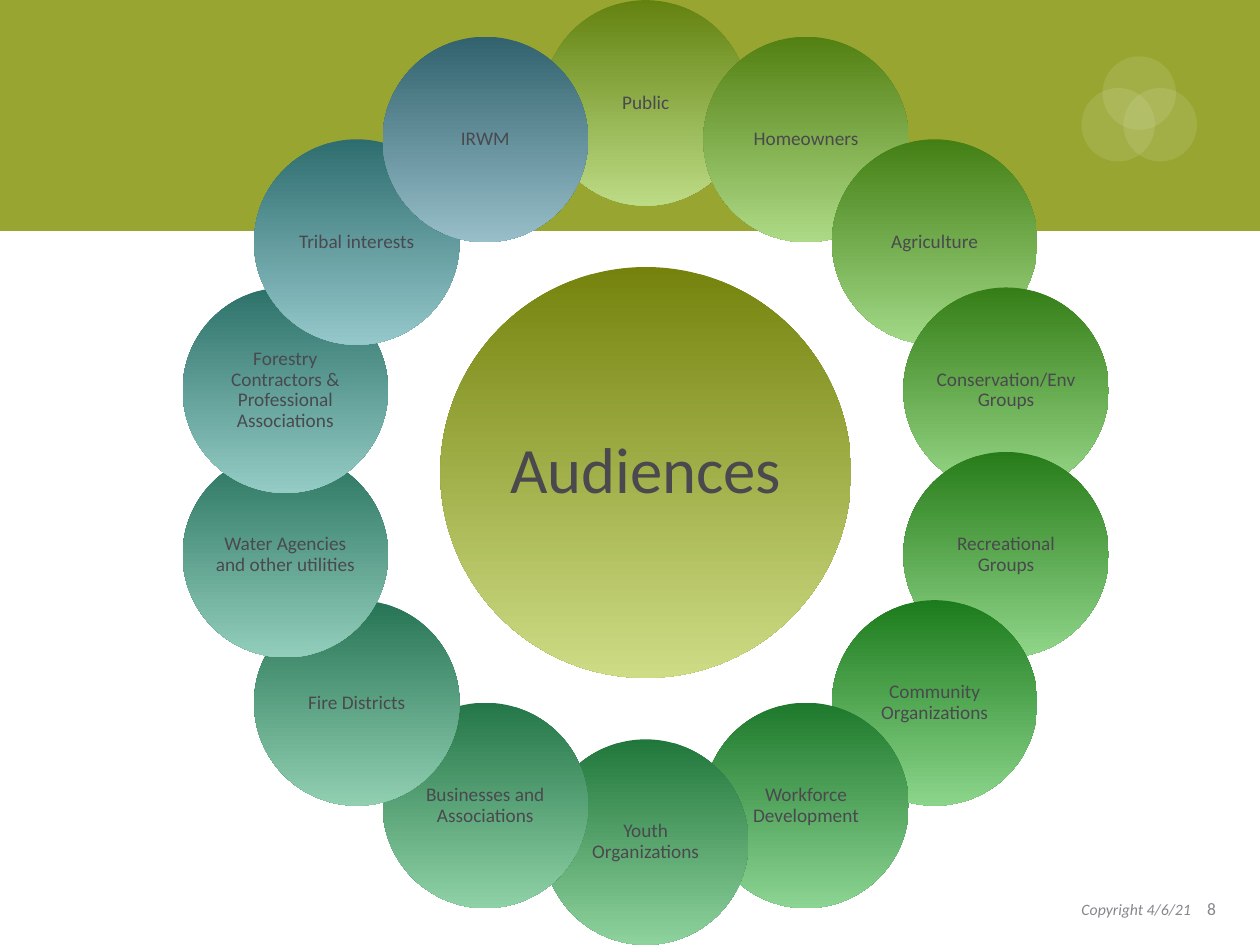
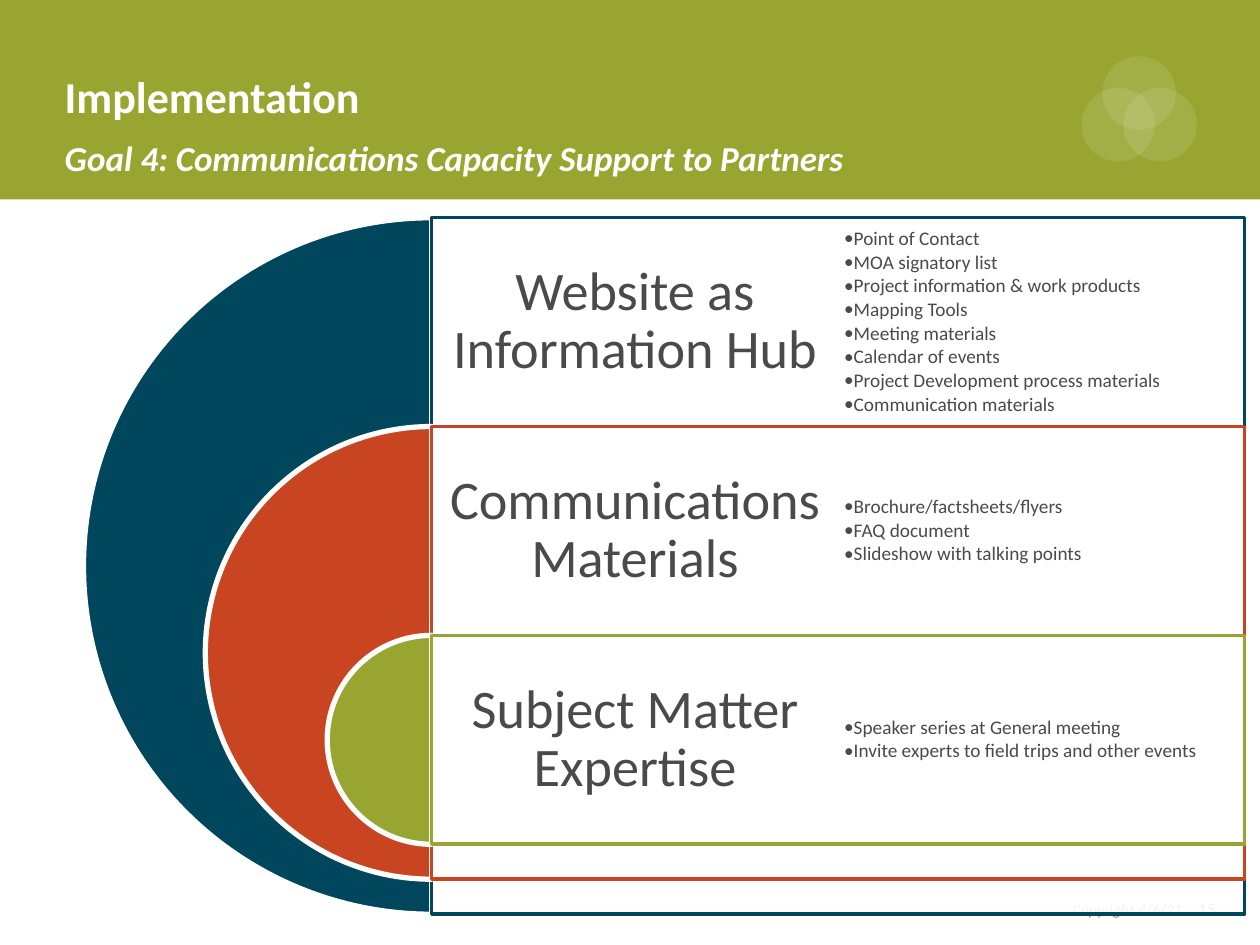
"""Build two slides: a ring of audiences and a nested implementation chart."""
from dataclasses import dataclass
from math import cos, pi, sin

from lxml import etree
from pptx import Presentation
from pptx.dml.color import RGBColor
from pptx.enum.shapes import MSO_SHAPE
from pptx.enum.text import MSO_ANCHOR, PP_ALIGN
from pptx.oxml.ns import qn
from pptx.util import Pt

OVAL, RECTANGLE, PIE = MSO_SHAPE.OVAL, MSO_SHAPE.RECTANGLE, MSO_SHAPE.PIE
LEFT, CENTER = PP_ALIGN.LEFT, PP_ALIGN.CENTER
MIDDLE = MSO_ANCHOR.MIDDLE

FONT = "Calibri"
COLORS = {
    "white": "FFFFFF",
    "olive": "98A631",
    "navy": "00465C",
    "rust": "C94420",
    "text": "49494E",
    "footer": "86868E",
}
SLIDE_WIDTH, SLIDE_HEIGHT = 720, 540
BAND_HEIGHT = 132
FOOTER_RIGHT, FOOTER_TOP, FOOTER_HEIGHT = 694.8, 508.5, 21

RING_X, RING_Y, RING_RADIUS = 369, 270, 211.2
CIRCLE_SIZE, HUB_SIZE = 117.4, 234.8

CHART_LEFT, CHART_TOP, CHART_WIDTH = 246.7, 124.4, 464.4
ROW_HEIGHT, OUTER_SIZE, SIZE_STEP = 119.35, 398, 139.3


@dataclass(frozen=True)
class Frame:
    left: float
    top: float
    width: float
    height: float


@dataclass(frozen=True)
class TextStyle:
    size: float
    color: str = "text"
    align: PP_ALIGN = CENTER
    bold: bool = False
    italic: bool = False
    spacing: float = 1.0
    inset: float = 0
    bullet: bool = False


@dataclass(frozen=True)
class Audience:
    label: str
    dark: str
    light: str


@dataclass(frozen=True)
class Topic:
    heading: str
    color: str
    items: tuple[str, ...]


TITLE = TextStyle(25.2, "white", LEFT, bold=True)
SUBTITLE = TextStyle(20, "white", LEFT, bold=True, italic=True)
FOOTER = TextStyle(9, "footer", LEFT, italic=True)
HUB_LABEL = TextStyle(37, spacing=0.9, inset=3.5)
CIRCLE_LABEL = TextStyle(11, spacing=0.9, inset=1)
HEADING = TextStyle(31, spacing=0.9, inset=8)
ITEM = TextStyle(11, align=LEFT, spacing=0.9, inset=3.5, bullet=True)

HUB = Audience("Audiences", "75830D", "CDDC85")
AUDIENCES = (
    Audience("Public", "638210", "BCDB85"),
    Audience("Homeowners", "538012", "ADDA86"),
    Audience("Agriculture", "437F14", "A2D988"),
    Audience("Conservation/Env Groups", "357E17", "98D889"),
    Audience("Recreational Groups", "277C19", "90D68A"),
    Audience("Community Organizations", "1C7B1C", "8BD58B"),
    Audience("Workforce Development", "1E792C", "8CD493"),
    Audience("Youth Organizations", "21773B", "8ED29D"),
    Audience("Businesses and Associations", "247648", "8FD1A7"),
    Audience("Fire Districts", "267455", "91CFB1"),
    Audience("Water Agencies and other utilities", "29735F", "92CEBB"),
    Audience("Forestry Contractors & Professional Associations", "2C7169", "94CCC5"),
    Audience("Tribal interests", "2E6D6F", "95C8CB"),
    Audience("IRWM", "31626D", "97BEC9"),
)
TOPICS = (
    Topic("Website as Information Hub", "navy", (
        "Point of Contact",
        "MOA signatory list",
        "Project information & work products",
        "Mapping Tools",
        "Meeting materials",
        "Calendar of events",
        "Project Development process materials",
        "Communication materials",
    )),
    Topic("Communications Materials", "rust", (
        "Brochure/factsheets/flyers",
        "FAQ document",
        "Slideshow with talking points",
    )),
    Topic("Subject Matter Expertise", "olive", (
        "Speaker series at General meeting",
        "Invite experts to field trips and other events",
    )),
)


def rgb(name: str) -> RGBColor:
    """Return a palette colour."""
    return RGBColor.from_string(COLORS[name])


def points(frame: Frame) -> tuple:
    """Convert a frame to lengths."""
    return Pt(frame.left), Pt(frame.top), Pt(frame.width), Pt(frame.height)


def add_bullet(para) -> None:
    """Give a paragraph a hanging bullet in the text font."""
    properties = para._p.get_or_add_pPr()
    properties.set("marL", str(Pt(4.5)))
    properties.set("indent", str(-Pt(4.5)))
    etree.SubElement(properties, qn("a:buFont")).set("typeface", FONT)
    etree.SubElement(properties, qn("a:buChar")).set("char", "•")


def write_text(shape, lines: tuple[str, ...], style: TextStyle) -> None:
    """Fill a shape with middle-anchored paragraphs of one style."""
    frame = shape.text_frame
    frame.word_wrap = True
    frame.vertical_anchor = MIDDLE
    frame.margin_left = frame.margin_right = Pt(style.inset)
    frame.margin_top = frame.margin_bottom = Pt(style.inset)
    for index, line in enumerate(lines):
        para = frame.add_paragraph() if index else frame.paragraphs[0]
        para.text = line
        para.alignment = style.align
        para.line_spacing = style.spacing
        if style.bullet:
            para.space_after = Pt(1.65)
            add_bullet(para)
        para.font.name = FONT
        para.font.size = Pt(style.size)
        para.font.bold = style.bold
        para.font.italic = style.italic
        para.font.color.rgb = rgb(style.color)


def add_text(page, frame: Frame, lines: tuple[str, ...], style: TextStyle) -> None:
    """Add a text box."""
    write_text(page.shapes.add_textbox(*points(frame)), lines, style)


def add_footer(page, number: int) -> None:
    """Add the copyright line with the page number at a right tab."""
    left = 623 - 5 * len(str(number))
    width = FOOTER_RIGHT - left
    box = page.shapes.add_textbox(*points(Frame(left, FOOTER_TOP, width + 5, FOOTER_HEIGHT)))
    para = box.text_frame.paragraphs[0]
    tabs = etree.SubElement(para._p.get_or_add_pPr(), qn("a:tabLst"))
    etree.SubElement(tabs, qn("a:tab"), pos=str(Pt(width)), algn="r")
    write_text(box, ("Copyright 4/6/21",), FOOTER)
    span = para.add_run()
    span.text = f"\t{number}"
    span.font.size = Pt(10)
    span.font.italic = False


def add_shape(page, kind: MSO_SHAPE, frame: Frame, fill: str, opacity: int = 100,
              line: str = "", line_width: float = 0):
    """Add a flat shape, outlined when a line colour is given."""
    shape = page.shapes.add_shape(kind, *points(frame))
    shape.shadow.inherit = False
    shape.fill.solid()
    shape.fill.fore_color.rgb = rgb(fill)
    if opacity < 100:
        color = shape._element.spPr.find(qn("a:solidFill"))[0]
        etree.SubElement(color, qn("a:alpha")).set("val", str(opacity * 1000))
    if line:
        shape.line.color.rgb = rgb(line)
        shape.line.width = Pt(line_width)
    else:
        shape.line.fill.background()
    return shape


def add_page(deck, number: int):
    """Add a slide with the band, footer and emblem circles."""
    page = deck.slides.add_slide(deck.slide_layouts[6])
    add_shape(page, RECTANGLE, Frame(0, 0, SLIDE_WIDTH, BAND_HEIGHT), "olive")
    add_footer(page, number)
    for left, top in ((618, 50.3), (642, 50.3), (630, 32.2)):
        add_shape(page, OVAL, Frame(left, top, 42, 42), "white", opacity=10)
    return page


def add_circle(page, audience: Audience, center_x: float, center_y: float,
               size: float, style: TextStyle) -> None:
    """Add a labelled circle shaded from dark to light."""
    frame = Frame(center_x - size / 2, center_y - size / 2, size, size)
    circle = add_shape(page, OVAL, frame, "olive")
    circle.fill.gradient()
    circle.fill.gradient_angle = 270
    for stop, color in zip(circle.fill.gradient_stops, (audience.dark, audience.light)):
        stop.color.rgb = RGBColor.from_string(color)
    write_text(circle, (audience.label,), style)


def build_audiences(deck) -> None:
    """Draw the audiences around their hub."""
    page = add_page(deck, 8)
    add_circle(page, HUB, RING_X, RING_Y, HUB_SIZE, HUB_LABEL)
    for index, audience in enumerate(AUDIENCES):
        angle = 2 * pi * index / len(AUDIENCES)
        add_circle(page, audience, RING_X + RING_RADIUS * sin(angle),
                   RING_Y - RING_RADIUS * cos(angle), CIRCLE_SIZE, CIRCLE_LABEL)


def build_implementation(deck) -> None:
    """Draw the nested half circles with their topics."""
    page = add_page(deck, 15)
    add_text(page, Frame(37, 35, 538, 40), ("Implementation",), TITLE)
    add_text(page, Frame(37, 72.5, 538, 35),
             ("Goal 4: Communications Capacity Support to Partners",), SUBTITLE)
    add_shape(page, RECTANGLE, Frame(0, 114, SLIDE_WIDTH, 180), "white")
    column = CHART_WIDTH / 2
    for index, topic in enumerate(TOPICS):
        top = CHART_TOP + index * ROW_HEIGHT
        size = OUTER_SIZE - index * SIZE_STEP
        half = add_shape(page, PIE, Frame(CHART_LEFT - size / 2, top, size, size),
                         topic.color, line="white", line_width=3)
        half.adjustments[0], half.adjustments[1] = 54, 162
        add_shape(page, RECTANGLE, Frame(CHART_LEFT, top, CHART_WIDTH, size),
                  "white", opacity=90, line=topic.color, line_width=2)
        add_text(page, Frame(CHART_LEFT, top, column, ROW_HEIGHT), (topic.heading,), HEADING)
        add_text(page, Frame(CHART_LEFT + column, top, column, ROW_HEIGHT), topic.items, ITEM)


def main() -> None:
    """Create and save the deck."""
    deck = Presentation()
    deck.slide_width, deck.slide_height = Pt(SLIDE_WIDTH), Pt(SLIDE_HEIGHT)
    build_audiences(deck)
    build_implementation(deck)
    deck.save("out.pptx")


if __name__ == "__main__":
    main()
